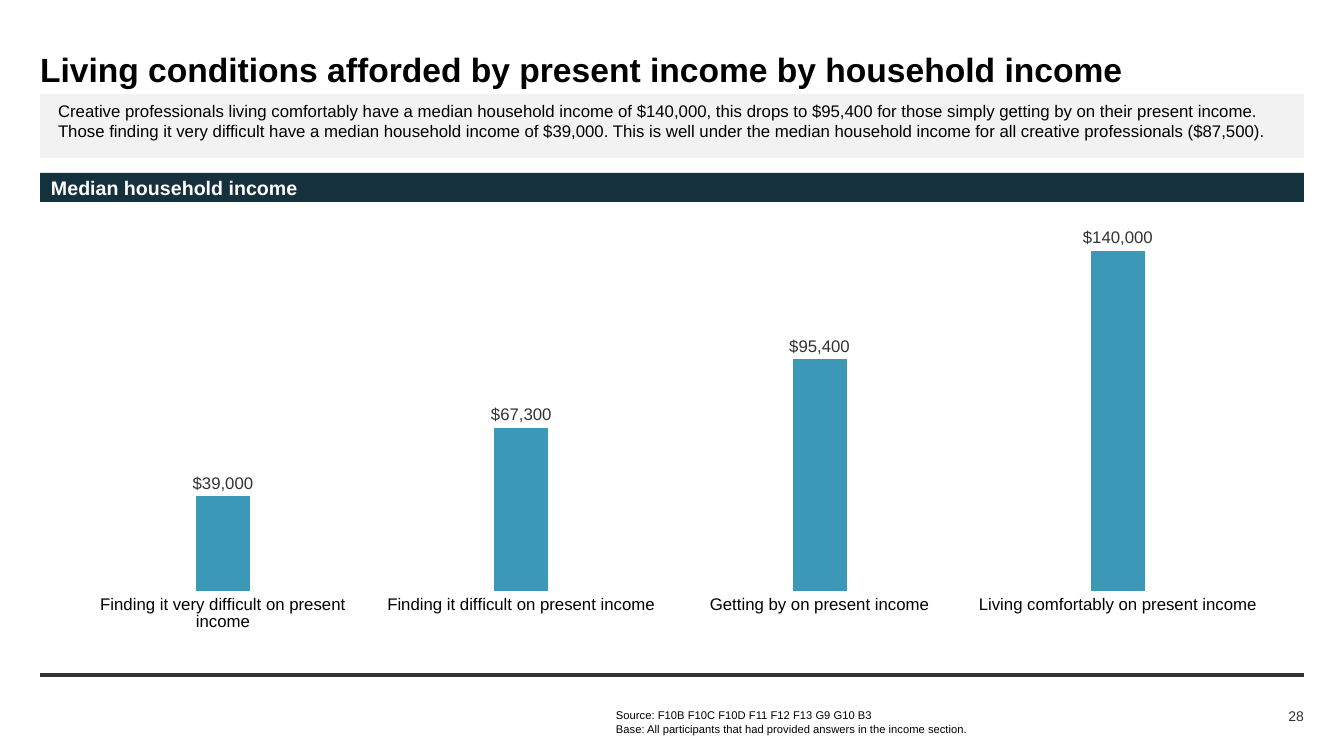
"""Build the slide on median household income by living conditions."""
from lxml import etree
from pptx import Presentation
from pptx import util as u
from pptx.chart.data import CategoryChartData
from pptx.dml.color import RGBColor
from pptx.enum import chart as charts, shapes, text
from pptx.oxml import parse_xml
from pptx.oxml.ns import nsdecls, qn

EMU_PER_PX = 12192000 / 1344
DOLLARS = '"$"#,##0'
INCOMES = {
    "Finding it very difficult on present income": 39000,
    "Finding it difficult on present income": 67300,
    "Getting by on present income": 95400,
    "Living comfortably on present income": 140000,
}
SUMMARY = (
    "Creative professionals living comfortably have a median household income of $140,000, "
    "this drops to $95,400 for those simply getting by on their present income. "
    "Those finding it very difficult have a median household income of $39,000. "
    "This is well under the median household income for all creative professionals ($87,500)."
)
SOURCES = [
    "Source: F10B F10C F10D F11 F12 F13 G9 G10 B3",
    "Base: All participants that had provided answers in the income section.",
]


def px(length):
    """Turn pixels into EMU."""
    return u.Emu(round(length * EMU_PER_PX))


def colour(value):
    """Turn a hex string into a colour."""
    return RGBColor.from_string(value)


def place(shape, box):
    """Move a shape to a box given in pixels."""
    for name, length in zip(("left", "top", "width", "height"), box):
        setattr(shape, name, px(length))


def format_font(font, size, hex_colour, bold=False):
    """Apply the slide's typeface with a size, colour and weight."""
    values = {"name": "Arial", "size": u.Pt(size), "bold": bold}
    for name, value in values.items():
        setattr(font, name, value)
    font.color.rgb = colour(hex_colour)


def write(shape, lines, size, hex_colour="000000", bold=False, inset=0, gap=0,
          align=text.PP_ALIGN.LEFT, anchor=text.MSO_ANCHOR.MIDDLE):
    """Fill a shape with unbulleted paragraphs."""
    frame = shape.text_frame
    values = {"margin_left": px(inset), "margin_top": 0, "margin_right": 0,
              "margin_bottom": 0, "word_wrap": True, "vertical_anchor": anchor,
              "auto_size": text.MSO_AUTO_SIZE.NONE}
    for name, value in values.items():
        setattr(frame, name, value)
    for index, line in enumerate(lines):
        paragraph = frame.add_paragraph() if index else frame.paragraphs[0]
        paragraph.text = line
        properties = paragraph._p.get_or_add_pPr()
        properties.set("marL", "0")
        properties.set("indent", "0")
        etree.SubElement(properties, qn("a:buNone"))
        spacing = {"alignment": align, "line_spacing": 1.0, "space_after": u.Pt(0),
                   "space_before": u.Pt(gap if index else 0)}
        for name, value in spacing.items():
            setattr(paragraph, name, value)
        format_font(paragraph.runs[0].font, size, hex_colour, bold)


def add_band(slide, box, fill):
    """Add a plain filled rectangle."""
    band = slide.shapes.add_shape(shapes.MSO_SHAPE.RECTANGLE, *map(px, box))
    band.shadow.inherit = False
    band.fill.solid()
    band.fill.fore_color.rgb = colour(fill)
    band.line.fill.background()
    return band


def add_heading(slide, box):
    """Place the title above the shaded summary."""
    left, top, width, height = box
    panel = add_band(slide, (left, top + 47, width, height - 47), "F2F2F2")
    panel.element.getparent().insert(2, panel.element)
    title, summary = slide.placeholders[0], slide.placeholders[1]
    place(title, (left, top, width, 44))
    write(title, ["Living conditions afforded by present income by household income"],
          24, bold=True)
    place(summary, (left + 18, top + 54, width - 30, 73))
    write(summary, [SUMMARY], 12, anchor=text.MSO_ANCHOR.TOP)


def add_income_chart(slide, box):
    """Place the section band and the column chart below it."""
    left, top, width, height = box
    band = add_band(slide, (left, top, width, 29), "16313E")
    write(band, ["Median household income"], 14, "FFFFFF", True, inset=11)

    data = CategoryChartData(number_format=DOLLARS)
    data.categories = list(INCOMES)
    data.add_series("Series 1", list(INCOMES.values()))
    chart_box = (left + 9, top + 45, width - 21, height - 45)
    chart = slide.shapes.add_chart(
        charts.XL_CHART_TYPE.COLUMN_CLUSTERED, *map(px, chart_box), data).chart
    chart.has_legend = chart.has_title = False
    format_font(chart.font, 10, "333333")

    category_axis, value_axis = chart.category_axis, chart.value_axis
    category_axis.major_tick_mark = charts.XL_TICK_MARK.NONE
    category_axis.format.line.fill.background()
    format_font(category_axis.tick_labels.font, 12, "000000")
    scale = {"minimum_scale": 0, "maximum_scale": 150000, "major_unit": 50000,
             "has_major_gridlines": False, "visible": False}
    for name, value in scale.items():
        setattr(value_axis, name, value)

    plot = chart.plots[0]
    plot.gap_width = 452
    plot.vary_by_categories = False
    series = plot.series[0]
    series.format.fill.solid()
    series.format.fill.fore_color.rgb = colour("3B98B7")
    labels = series.data_labels
    label_values = {"show_value": True, "number_format": DOLLARS,
                    "number_format_is_linked": False,
                    "position": charts.XL_LABEL_POSITION.OUTSIDE_END}
    for name, value in label_values.items():
        setattr(labels, name, value)
    format_font(labels.font, 12, "333333")
    set_plot_layout(chart, {"x": 0.02, "y": 0.02, "w": 0.96, "h": 0.865})


def set_plot_layout(chart, fractions):
    """Fix the inner plot area as fractions of the chart."""
    area = chart.element.find(".//" + qn("c:plotArea"))
    for layout in area.findall(qn("c:layout")):
        area.remove(layout)
    edges = "".join(f'<c:{name}Mode val="edge"/>' for name in "xy")
    sizes = "".join(f'<c:{name} val="{value}"/>' for name, value in fractions.items())
    area.insert(0, parse_xml(
        f'<c:layout {nsdecls("c")}><c:manualLayout><c:layoutTarget val="inner"/>'
        f'{edges}{sizes}</c:manualLayout></c:layout>'))


def add_footer(slide, box):
    """Place the rule, the sources and the page number."""
    left, top, width, height = box
    rule = slide.shapes.add_connector(
        shapes.MSO_CONNECTOR.STRAIGHT, px(left), px(top), px(left + width), px(top))
    rule.line.color.rgb = colour("333333")
    rule.line.width = u.Pt(3)
    etree.SubElement(rule.element.spPr, qn("a:effectLst"))
    sources = slide.placeholders[2]
    place(sources, (left + 576, top + 33, 505, 28))
    write(sources, SOURCES, 8, gap=1, anchor=text.MSO_ANCHOR.TOP)
    number_box = (left + width - 107, top + height - 32, 107, 22)
    number = slide.shapes.add_textbox(*map(px, number_box))
    write(number, ["28"], 10, "333333", align=text.PP_ALIGN.RIGHT)


def main():
    """Assemble and save the presentation."""
    presentation = Presentation()
    presentation.slide_width, presentation.slide_height = px(1344), px(756)
    slide = presentation.slides.add_slide(presentation.slide_layouts[3])
    add_heading(slide, (40, 47, 1264, 111))
    add_income_chart(slide, (40, 173, 1264, 467))
    add_footer(slide, (40, 675, 1264, 62))
    presentation.save("out.pptx")


if __name__ == "__main__":
    main()
